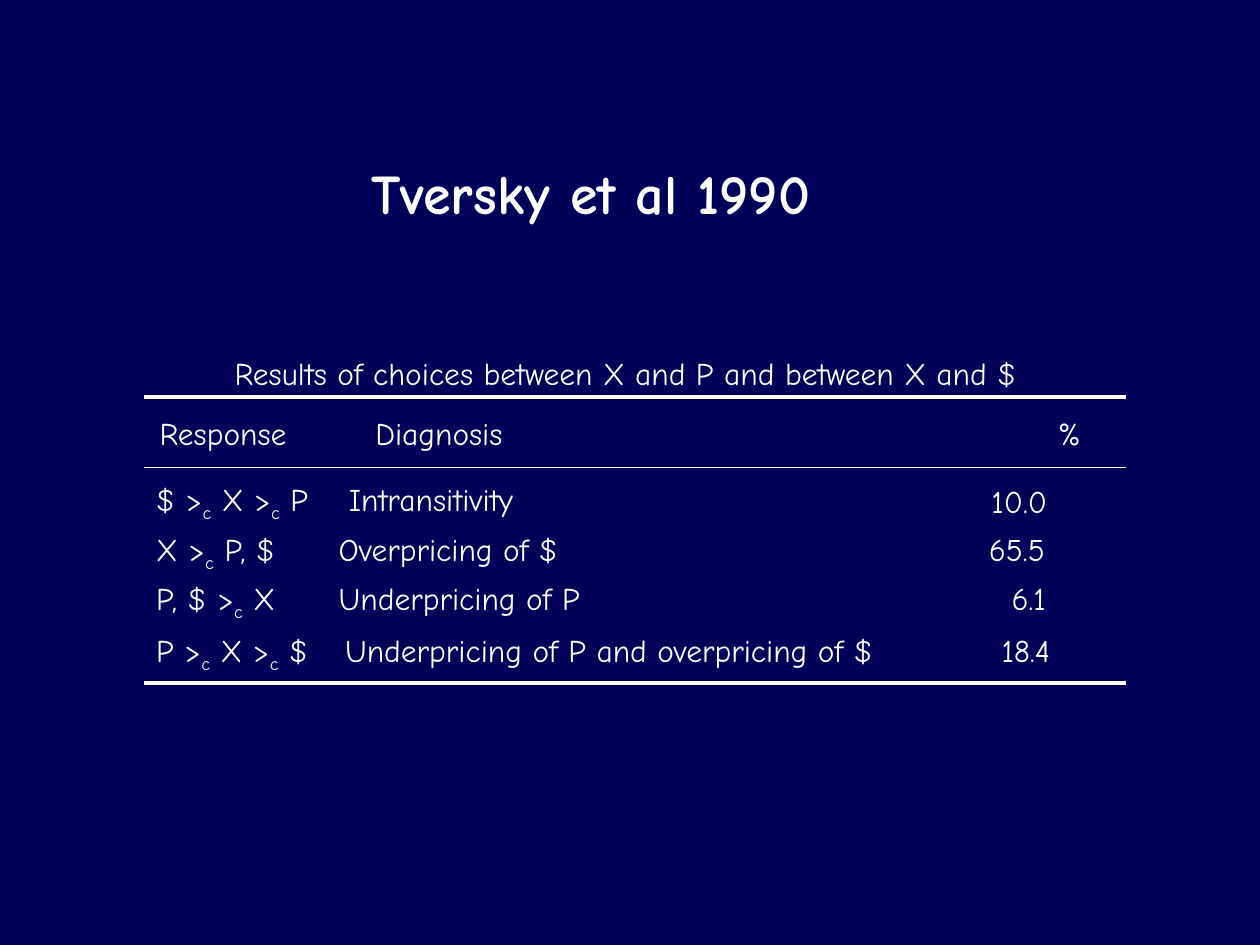
"""Build a slide with a ruled table of choice responses and diagnoses."""
from lxml import etree
from pptx import Presentation
from pptx.dml.color import RGBColor
from pptx.enum.shapes import MSO_CONNECTOR
from pptx.enum.text import MSO_ANCHOR, PP_ALIGN
from pptx.oxml.ns import qn
from pptx.util import Inches, Pt

LEFT, CENTER = PP_ALIGN.LEFT, PP_ALIGN.CENTER
MIDDLE = MSO_ANCHOR.MIDDLE
STRAIGHT = MSO_CONNECTOR.STRAIGHT

FONT, NAVY, WHITE = "Comic Neue", "000058", "FFFFFF"
TITLE = "Tversky et al 1990"
CAPTION = "Results of choices between X and P and between X and $"
# Each "_c" is set as a subscript c.
ROWS = [
    {"response": "$ >_c X >_c P", "diagnosis": "Intransitivity", "percent": "10.0",
     "top": 3.76, "width": 4.17, "tab": 1.53, "percent_box": (7.77, 3.78, 1.1)},
    {"response": "X >_c P, $", "diagnosis": "Overpricing of $", "percent": "65.5",
     "top": 4.16, "width": 4.33, "tab": 1.45, "percent_box": (7.75, 4.16, 1.1)},
    {"response": "P, $ >_c X", "diagnosis": "Underpricing of P", "percent": "6.1",
     "top": 4.55, "width": 5.43, "tab": 1.45, "percent_box": (7.93, 4.55, 0.79)},
    {"response": "P >_c X >_c $", "diagnosis": "Underpricing of P and overpricing of $",
     "percent": "18.4", "top": 4.96, "width": 6.38, "tab": 1.5,
     "percent_box": (7.85, 4.96, 0.79)},
]
RULES = [(3.15, 2.25), (3.71, 0.75), (5.42, 2.25)]
TABLE_LEFT, TABLE_RIGHT, LINE_HEIGHT = 1.14, 8.94, 0.4


def color(value):
    return RGBColor.from_string(value)


def write(frame, text, size=18, bold=False, align=LEFT, tab=None):
    """Write text into a frame, with subscripts and an optional tab stop."""
    frame.word_wrap = True
    paragraph = frame.paragraphs[0]
    paragraph.alignment = align
    if tab:
        stops = etree.SubElement(paragraph._p.get_or_add_pPr(), qn("a:tabLst"))
        etree.SubElement(stops, qn("a:tab"), pos=str(Inches(tab)), algn="l")
    for part in text.replace("_c", "|_c|").split("|"):
        run = paragraph.add_run()
        run.text = part.removeprefix("_")
        run.font.name, run.font.size, run.font.bold = FONT, Pt(size), bold
        run.font.color.rgb = color(WHITE)
        if part == "_c":
            run._r.get_or_add_rPr().set("baseline", "-25000")


def add_text(slide, text, left, top, width, **style):
    box = slide.shapes.add_textbox(*map(Inches, (left, top, width, LINE_HEIGHT)))
    write(box.text_frame, text, **style)


def add_rule(slide, top, weight):
    ends = (TABLE_LEFT, top, TABLE_RIGHT, top)
    rule = slide.shapes.add_connector(STRAIGHT, *map(Inches, ends))
    rule.line.color.rgb = color(WHITE)
    rule.line.width = Pt(weight)
    etree.SubElement(rule._element.spPr, qn("a:effectLst"))


def main():
    deck = Presentation()
    deck.slide_width, deck.slide_height = Inches(10), Inches(7.5)
    slide = deck.slides.add_slide(deck.slide_layouts[5])
    slide.background.fill.solid()
    slide.background.fill.fore_color.rgb = color(NAVY)

    title = slide.shapes.title
    title.left, title.top, title.width, title.height = map(Inches, (0.44, 0.69, 8.5, 1.67))
    title.fill.solid()
    title.fill.fore_color.rgb = color(NAVY)
    title.text_frame.vertical_anchor = MIDDLE
    write(title.text_frame, TITLE, size=32, bold=True, align=CENTER)

    for top, weight in RULES:
        add_rule(slide, top, weight)
    add_text(slide, CAPTION, 1.46, 2.76, 7.01, align=CENTER)
    add_text(slide, "Response", 1.06, 3.24, 1.42, align=CENTER)
    add_text(slide, "Diagnosis\t%", 2.88, 3.24, 5.98, tab=5.42)
    for row in ROWS:
        add_text(slide, f"{row['response']}\t{row['diagnosis']}",
                 TABLE_LEFT, row["top"], row["width"], tab=row["tab"])
        add_text(slide, row["percent"], *row["percent_box"])
    deck.save("out.pptx")


if __name__ == "__main__":
    main()
